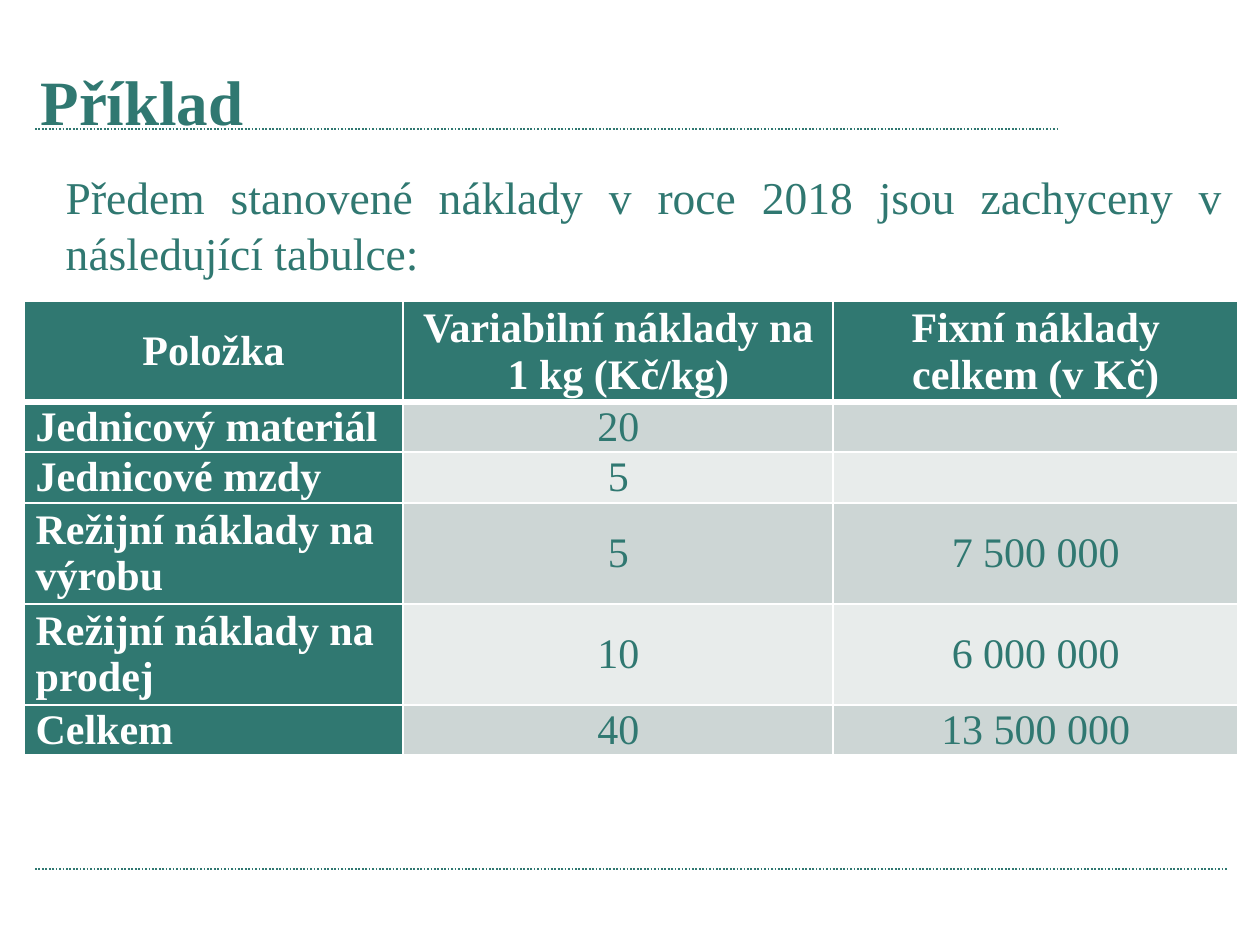
from lxml.etree import SubElement
from pptx import Presentation
from pptx.dml.color import RGBColor
from pptx.enum.dml import MSO_LINE
from pptx.enum.shapes import MSO_CONNECTOR
from pptx.enum.text import MSO_ANCHOR, MSO_AUTO_SIZE, PP_ALIGN
from pptx.oxml.ns import qn
from pptx.util import Cm, Pt

# Content
TITLE = "Příklad"
INTRO = "Předem stanovené náklady v roce 2018 jsou zachyceny v následující tabulce:"
COSTS = [
    ("Položka", "Variabilní náklady na 1 kg (Kč/kg)", "Fixní náklady celkem (v Kč)"),
    ("Jednicový materiál", "20", ""),
    ("Jednicové mzdy", "5", ""),
    ("Režijní náklady na výrobu", "5", "7 500 000"),
    ("Režijní náklady na prodej", "10", "6 000 000"),
    ("Celkem", "40", "13 500 000"),
]

# Theme
THEME = {
    "font": "Times New Roman",
    "teal": RGBColor.from_string("307871"),
    "white": RGBColor.from_string("FFFFFF"),
    "bands": [RGBColor.from_string(c) for c in ("CDD6D5", "E8ECEB")],
    "title": Pt(27), "body": Pt(19.5), "cell": Pt(18),
}

# Layout in cm
SLIDE = (19.05, 14.28)
TITLE_BOX = (0.36, 0.77, 16.79, 1.5)
INTRO_BOX = (0.74, 2.4, 18.01, 2)
RULES = [(0.53, 1.95, 15.98), (0.53, 13.13, 18.57)]  # left, y, right
TABLE_LEFT, TABLE_TOP = 0.36, 4.55
COL_WIDTHS = (5.74, 6.5, 6.12)
LINE_HEIGHT = 0.762
ROW_LINES = (2, 1, 1, 2, 2, 1)


def write(tf, text, size, color, bold=False, align=PP_ALIGN.LEFT, spacing=1.0):
    p = tf.paragraphs[0]
    SubElement(p._p.get_or_add_pPr(), qn("a:buNone"))
    p._p.pPr.set("marL", "0")
    p._p.pPr.set("indent", "0")
    p.text = text
    for name, value in {"alignment": align, "space_before": Pt(0),
                        "line_spacing": spacing}.items():
        setattr(p, name, value)
    for f in [p.font] + [r.font for r in p.runs]:
        for name, value in {"name": THEME["font"], "size": size, "bold": bold}.items():
            setattr(f, name, value)
        f.color.rgb = color


def place(sp, box, anchor):
    sp.left, sp.top, sp.width, sp.height = map(Cm, box)
    for name, value in {"auto_size": MSO_AUTO_SIZE.NONE, "word_wrap": True,
                        "vertical_anchor": anchor}.items():
        setattr(sp.text_frame, name, value)
    return sp.text_frame


def add_borders(cell, header):
    tcPr = cell._tc.get_or_add_tcPr()
    for side in ("lnL", "lnR", "lnT", "lnB"):
        thick = (header == 0 and side == "lnB") or (header == 1 and side == "lnT")
        ln = SubElement(tcPr, qn("a:" + side), w=str(Pt(3 if thick else 1)))
        fill = SubElement(ln, qn("a:solidFill"))
        SubElement(fill, qn("a:srgbClr"), val=str(THEME["white"]))


def add_rule(slide, left, y, right):
    line = slide.shapes.add_connector(MSO_CONNECTOR.STRAIGHT, Cm(left), Cm(y), Cm(right), Cm(y))
    line.line.color.rgb = THEME["teal"]
    line.line.width = Pt(0.75)
    line.line.dash_style = MSO_LINE.ROUND_DOT
    SubElement(line._element.spPr, qn("a:effectLst"))


def add_cost_table(slide):
    frame = slide.shapes.add_table(len(COSTS), len(COL_WIDTHS), Cm(TABLE_LEFT), Cm(TABLE_TOP),
                                   Cm(sum(COL_WIDTHS)), Cm(LINE_HEIGHT * sum(ROW_LINES)))
    table = frame.table
    for column, width in zip(table.columns, COL_WIDTHS):
        column.width = Cm(width)
    for row, lines in zip(table.rows, ROW_LINES):
        row.height = Cm(LINE_HEIGHT * lines)
    for i, values in enumerate(COSTS):
        for j, value in enumerate(values):
            cell = table.cell(i, j)
            heading = i == 0 or j == 0
            add_borders(cell, i)
            for name, setting in {"margin_left": Cm(0.18), "margin_right": Cm(0.18),
                                  "margin_top": 0, "margin_bottom": 0,
                                  "vertical_anchor": MSO_ANCHOR.MIDDLE}.items():
                setattr(cell, name, setting)
            cell.fill.solid()
            cell.fill.fore_color.rgb = THEME["teal"] if heading else THEME["bands"][(i - 1) % 2]
            write(cell.text_frame, value, THEME["cell"],
                  THEME["white"] if heading else THEME["teal"], heading,
                  PP_ALIGN.LEFT if j == 0 and i > 0 else PP_ALIGN.CENTER)


def main():
    prs = Presentation()
    prs.slide_width, prs.slide_height = map(Cm, SLIDE)
    slide = prs.slides.add_slide(prs.slide_layouts[1])

    # Dotted rules
    for rule in RULES:
        add_rule(slide, *rule)

    # Title and introduction
    write(place(slide.shapes.title, TITLE_BOX, MSO_ANCHOR.MIDDLE),
          TITLE, THEME["title"], THEME["teal"], bold=True)
    write(place(slide.placeholders[1], INTRO_BOX, MSO_ANCHOR.TOP),
          INTRO, THEME["body"], THEME["teal"], align=PP_ALIGN.JUSTIFY, spacing=1.03)

    # Cost table
    add_cost_table(slide)
    prs.save("out.pptx")


if __name__ == "__main__":
    main()
